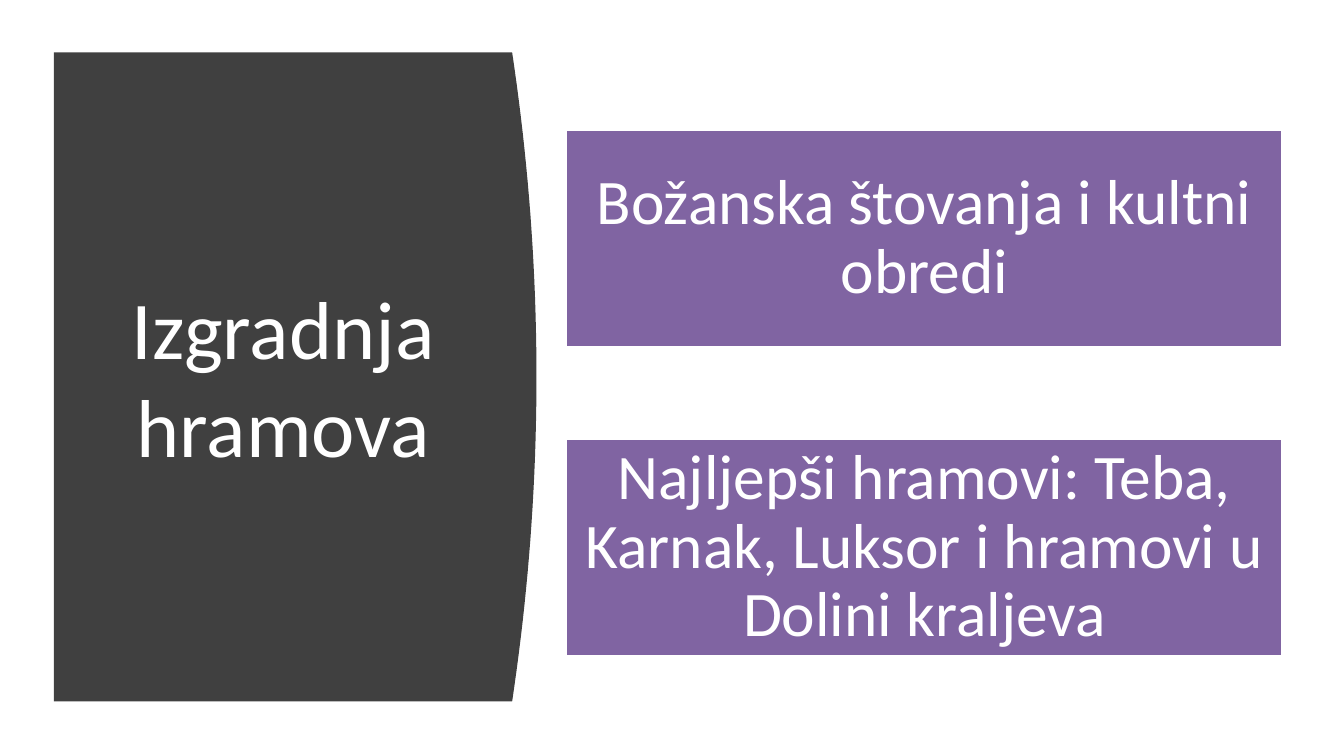
from dataclasses import dataclass

from pptx import Presentation
from pptx.dml.color import RGBColor as Rgb
from pptx.enum.shapes import MSO_SHAPE as Kind
from pptx.enum.text import MSO_ANCHOR as Anchor, MSO_AUTO_SIZE as Fit, PP_ALIGN as Align
from pptx.util import Cm, Pt

HUES = {"panel": "404040", "card": "8064A2", "white": "FFFFFF"}
FONT = "Calibri"


@dataclass
class Card:
    text: str
    top: float


def hue(name: str) -> Rgb:
    return Rgb.from_string(HUES[name])


def write(frame, text: str, size: int, inset: float, lead: float) -> None:
    frame.word_wrap = True
    frame.auto_size = Fit.NONE
    frame.vertical_anchor = Anchor.MIDDLE
    frame.margin_left = frame.margin_right = Cm(inset)
    frame.margin_top = frame.margin_bottom = Cm(min(inset, 0.13))
    para = frame.paragraphs[0]
    para.alignment = Align.CENTER
    para.line_spacing = lead
    run = para.add_run()
    run.text = text
    font = run.font
    font.name, font.size = FONT, Pt(size)
    font.color.rgb = hue("white")


def paint(shape, name: str) -> None:
    shape.shadow.inherit = False
    shape.fill.solid()
    shape.fill.fore_color.rgb = hue(name)


def draw_panel(slide) -> None:
    left, top, edge, base = 1.02, 0.99, 9.68, 13.26
    bulge, steps = 0.46, 40
    curve = []
    for i in range(steps + 1):
        t = i / steps
        x = edge + bulge * 4 * t * (1 - t)
        curve.append((Cm(x), Cm(top + (base - top) * t)))
    pen = slide.shapes.build_freeform(Cm(left), Cm(top))
    pen.add_line_segments(curve + [(Cm(left), Cm(base))], close=True)
    panel = pen.convert_to_shape()
    paint(panel, "panel")
    panel.line.fill.background()
    slide.shapes.title._element.addprevious(panel._element)


def draw_title(slide, text: str) -> None:
    title = slide.shapes.title
    title.left, title.top = Cm(1.8), Cm(2.11)
    title.width, title.height = Cm(7.11), Cm(9.98)
    write(title.text_frame, text, 44, 0.25, 1.0)


def draw_card(slide, card: Card) -> None:
    box = slide.shapes.add_shape(
        Kind.RECTANGLE, Cm(10.69), Cm(card.top), Cm(13.56), Cm(4.14))
    paint(box, "card")
    box.line.color.rgb = hue("white")
    box.line.width = Pt(2)
    write(box.text_frame, card.text, 34, 0.05, 0.9)


def main() -> None:
    deck = Presentation()
    deck.slide_width, deck.slide_height = Cm(25.4), Cm(14.29)
    slide = deck.slides.add_slide(deck.slide_layouts[5])
    draw_panel(slide)
    draw_title(slide, "Izgradnja hramova")
    cards = [
        Card("Božanska štovanja i kultni obredi", 2.44),
        Card("Najljepši hramovi: Teba, Karnak, Luksor i hramovi u Dolini kraljeva", 8.28),
    ]
    for card in cards:
        draw_card(slide, card)
    deck.save("out.pptx")


if __name__ == "__main__":
    main()
